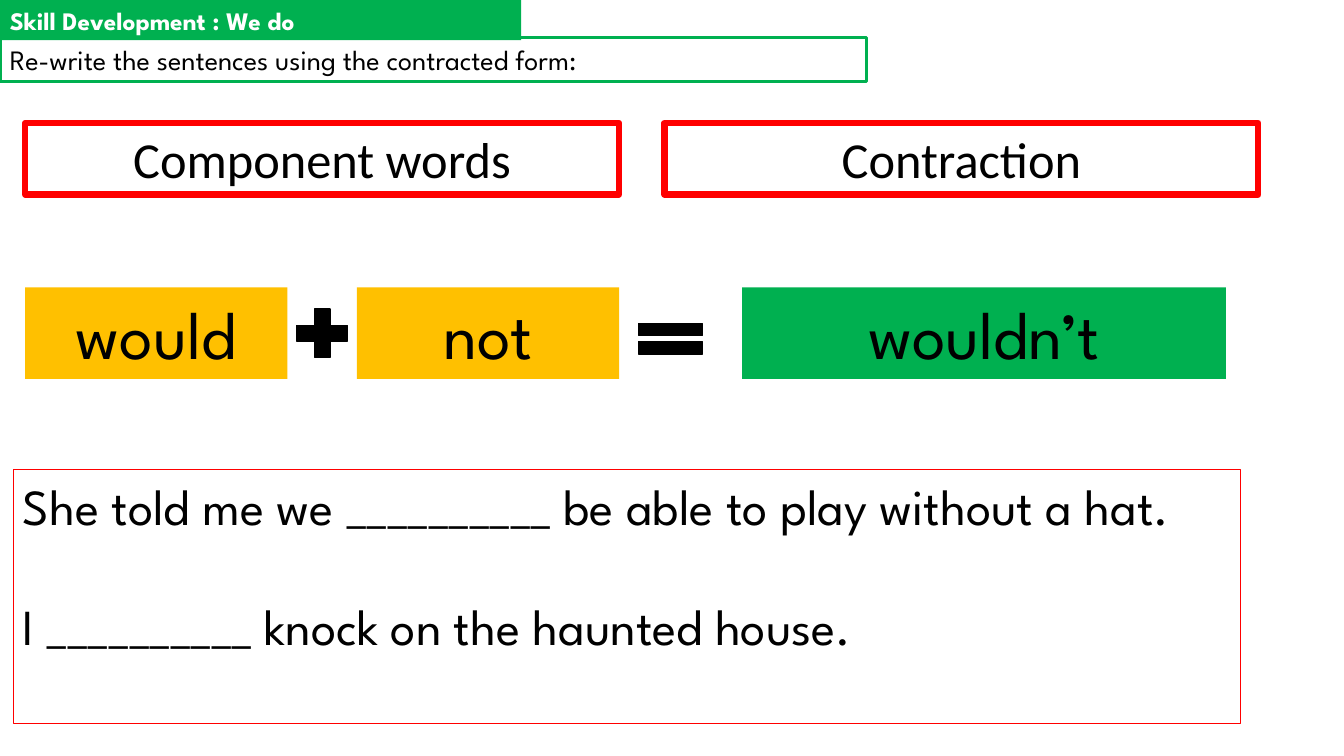
"""Build the contractions practice slide."""
from pptx import Presentation
from pptx.dml.color import RGBColor
from pptx.enum.shapes import MSO_SHAPE
from pptx.enum.text import MSO_ANCHOR, PP_ALIGN
from pptx.util import Inches, Pt

GREEN, AMBER, RED, BLACK, WHITE = "00B050", "FFC000", "FF0000", "000000", "FFFFFF"


def paint(fmt, color):
    fmt.solid()
    fmt.fore_color.rgb = RGBColor.from_string(color)


def add_box(text, x, y, w, h, shape=MSO_SHAPE.RECTANGLE, fill=None, line=None,
            width=1, size=18, font="League Spartan", color=BLACK, bold=False,
            align=PP_ALIGN.LEFT, gap=0):
    sp = s.shapes.add_shape(shape, Inches(x), Inches(y), Inches(w), Inches(h))
    sp.shadow.inherit = False
    if fill:
        paint(sp.fill, fill)
    else:
        sp.fill.background()
    if line:
        paint(sp.line.fill, line)
        sp.line.width = Pt(width)
    else:
        sp.line.fill.background()
    if not text:
        return
    tf = sp.text_frame
    tf.word_wrap = True
    tf.vertical_anchor = MSO_ANCHOR.TOP
    for i, words in enumerate(text.split("\n")):
        p = tf.add_paragraph() if i else tf.paragraphs[0]
        p.alignment = align
        if i:
            p.space_before = Pt(gap)
        r = p.add_run()
        r.text = words
        r.font.name, r.font.size, r.font.bold = font, Pt(size), bold
        paint(r.font.fill, color)


prs = Presentation()
prs.slide_width, prs.slide_height = Inches(13.33), Inches(7.5)
s = prs.slides.add_slide(prs.slide_layouts[6])

for heading, x in (("Component words", 0.25), ("Contraction", 6.59)):
    add_box(heading, x, 1.22, 5.89, 0.71, line=RED, width=4.5, size=36,
            font="Calibri", align=PP_ALIGN.CENTER)

for word, x, w, fill in (("would", 0.25, 2.6, AMBER), ("not", 3.54, 2.6, AMBER),
                         ("wouldn’t", 7.36, 4.8, GREEN)):
    add_box(word, x, 2.85, w, 0.91, fill=fill, size=48, align=PP_ALIGN.CENTER)

add_box("", 2.85, 2.98, 0.69, 0.65, MSO_SHAPE.MATH_PLUS, fill=BLACK, line=BLACK)
add_box("", 6.22, 3.1, 0.86, 0.52, MSO_SHAPE.MATH_EQUAL, fill=BLACK, line=BLACK)

sentences = ("She told me we __________ be able to play without a hat.\n"
             "I __________ knock on the haunted house.")
add_box(sentences, 0.13, 4.66, 12.17, 2.52, line=RED, width=0.75, size=36, gap=43)

add_box("Re-write the sentences using the contracted form:", 0, 0.37, 8.59, 0.44,
        line=GREEN, width=2.25, size=20)
add_box("Skill Development : We do", 0, 0, 5.17, 0.4, fill=GREEN, color=WHITE, bold=True)

prs.save("out.pptx")
